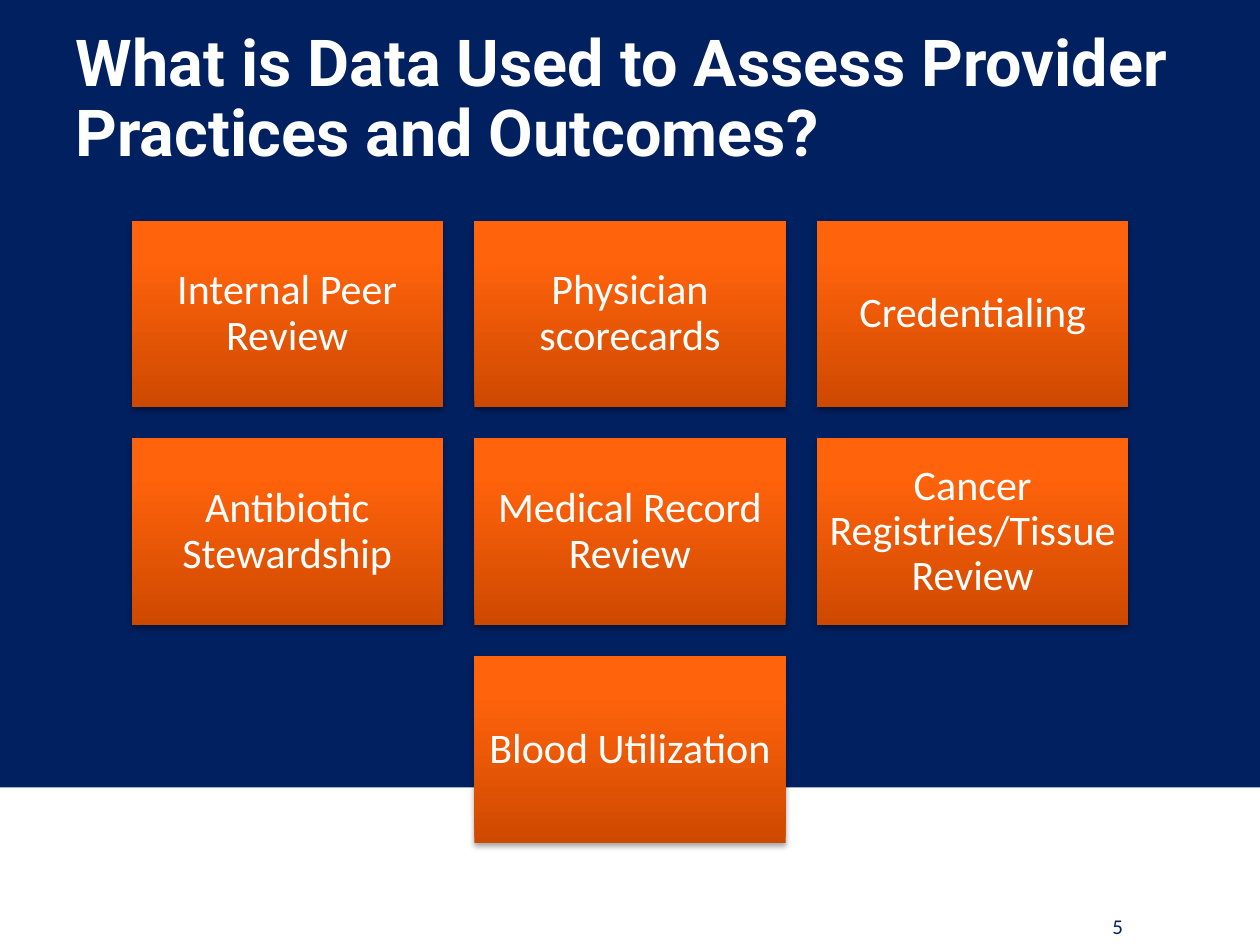
from lxml import etree
from pptx import Presentation
from pptx import util as u
from pptx.dml.color import RGBColor
from pptx.enum import shapes, text
from pptx.oxml.ns import nsdecls

THEME = {
    "navy": RGBColor.from_string("002060"),
    "white": RGBColor.from_string("FFFFFF"),
    "card_stops": [(0, "CE4900"), (80, "FF630C"), (100, "FF640E")],
    "title": ("Roboto", 37),
    "card": ("Calibri", 24),
    "number": ("Calibri", 12),
}
A = nsdecls("a")
STOPS = "".join(
    f'<a:gs pos="{pos * 1000}"><a:srgbClr val="{color}"/></a:gs>'
    for pos, color in THEME["card_stops"]
)
CARD_FILL = (f'<a:gradFill {A} rotWithShape="1"><a:gsLst>{STOPS}</a:gsLst>'
             '<a:lin ang="16200000" scaled="0"/></a:gradFill>')
CARD_SHADOW = (f'<a:effectLst {A}><a:outerShdw blurRad="40000" dist="23000" '
               'dir="5400000" rotWithShape="0"><a:srgbClr val="000000">'
               '<a:alpha val="35000"/></a:srgbClr></a:outerShdw></a:effectLst>')


def write(shape, words, style, color, align, spacing=1.0, bold=False):
    """Put one formatted, vertically centred paragraph in a shape."""
    tf = shape.text_frame
    tf.text = words
    tf.word_wrap = True
    tf.auto_size = text.MSO_AUTO_SIZE.NONE
    tf.vertical_anchor = text.MSO_ANCHOR.MIDDLE
    p = tf.paragraphs[0]
    p.alignment = align
    p.line_spacing = spacing
    p.space_before = u.Pt(0)
    font = p.runs[0].font
    font.name, font.size = style[0], u.Pt(style[1])
    font.bold = bold
    font.color.rgb = color


prs = Presentation()
prs.slide_width, prs.slide_height = u.Inches(10), u.Inches(7.5)
s = prs.slides.add_slide(prs.slide_layouts[5])

# Navy background band, placed behind the title
band = s.shapes.add_shape(shapes.MSO_SHAPE.RECTANGLE, 0, 0, prs.slide_width, u.Inches(6.25))
band.fill.solid()
band.fill.fore_color.rgb = THEME["navy"]
band.line.fill.background()
band.shadow.inherit = False
s.shapes._spTree.insert(2, band._element)

# Title
title = s.shapes.title
title.left, title.top = u.Inches(0.5), u.Inches(0.17)
title.width, title.height = u.Inches(9), u.Inches(1.25)
write(title, "What is Data Used to Assess Provider Practices and Outcomes?",
      THEME["title"], THEME["white"], text.PP_ALIGN.LEFT, 0.9, True)

# Card grid, each row centred on the slide
rows = [
    ["Internal Peer Review", "Physician scorecards", "Credentialing"],
    ["Antibiotic Stewardship", "Medical Record Review", "Cancer Registries/Tissue Review"],
    ["Blood Utilization"],
]
card_w, card_h, gap, grid_top = 2.47, 1.48, 0.25, 1.75
for i, row in enumerate(rows):
    row_w = len(row) * card_w + (len(row) - 1) * gap
    row_left = (10 - row_w) / 2
    for j, label in enumerate(row):
        sp = s.shapes.add_shape(
            shapes.MSO_SHAPE.RECTANGLE,
            u.Inches(row_left + j * (card_w + gap)),
            u.Inches(grid_top + i * (card_h + gap)),
            u.Inches(card_w), u.Inches(card_h))
        sp.line.fill.background()
        props = sp._element.spPr
        props.insert(2, etree.fromstring(CARD_FILL))
        props.append(etree.fromstring(CARD_SHADOW))
        tf = sp.text_frame
        tf.margin_left = tf.margin_right = tf.margin_top = tf.margin_bottom = u.Inches(0.1)
        write(sp, label, THEME["card"], THEME["white"], text.PP_ALIGN.CENTER, 0.9)

# Slide number
number = s.shapes.add_textbox(u.Inches(8.58), u.Inches(7.2), u.Inches(0.58), u.Inches(0.3))
write(number, "5", THEME["number"], THEME["navy"], text.PP_ALIGN.CENTER)

prs.save("out.pptx")
